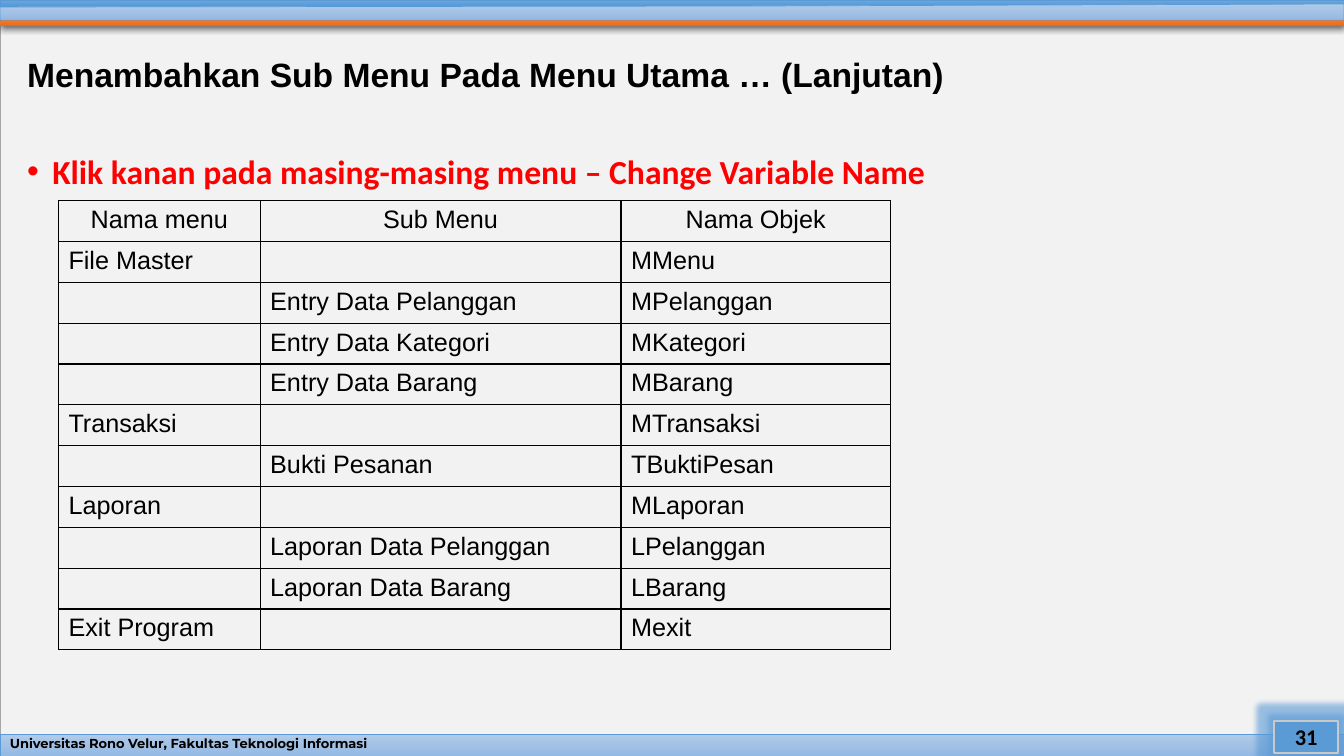
from lxml import etree
from pptx import Presentation
from pptx.dml.color import RGBColor
from pptx.enum.shapes import MSO_SHAPE
from pptx.enum.text import MSO_ANCHOR, PP_ALIGN
from pptx.oxml import parse_xml
from pptx.oxml.ns import nsdecls, qn
from pptx.util import Inches, Pt

RECT = MSO_SHAPE.RECTANGLE
TOP, MIDDLE = MSO_ANCHOR.TOP, MSO_ANCHOR.MIDDLE
LEFT, CENTER = PP_ALIGN.LEFT, PP_ALIGN.CENTER

BLACK = RGBColor(0x00, 0x00, 0x00)
RED = RGBColor(0xFF, 0x00, 0x00)
PAPER = RGBColor(0xF2, 0xF2, 0xF2)
GRAY = RGBColor(0xA5, 0xA5, 0xA5)
SILVER = RGBColor(0xC9, 0xC9, 0xC9)
BLUE = RGBColor(0x5B, 0x9B, 0xD5)
LIGHT_BLUES = (RGBColor(0xB1, 0xCB, 0xE9), RGBColor(0xA3, 0xC1, 0xE5), RGBColor(0x93, 0xB9, 0xE4))
DEEP_BLUES = (RGBColor(0x71, 0xA6, 0xDB), RGBColor(0x55, 0x9B, 0xDB), RGBColor(0x44, 0x8A, 0xCA))
ORANGES = (RGBColor(0xF1, 0x8C, 0x57), RGBColor(0xF6, 0x7B, 0x28), RGBColor(0xE5, 0x6C, 0x19))

WIDTH, HEIGHT = 13.33, 7.5
MENU_COLS = (2, 3.58, 2.67)
MENU_ROWS = (
    ("Nama menu", "Sub Menu", "Nama Objek"),
    ("File Master", "", "MMenu"),
    ("", "Entry Data Pelanggan", "MPelanggan"),
    ("", "Entry Data Kategori", "MKategori"),
    ("", "Entry Data Barang", "MBarang"),
    ("Transaksi", "", "MTransaksi"),
    ("", "Bukti Pesanan", "TBuktiPesan"),
    ("Laporan", "", "MLaporan"),
    ("", "Laporan Data Pelanggan", "LPelanggan"),
    ("", "Laporan Data Barang", "LBarang"),
    ("Exit Program", "", "Mexit"),
)


def write(tf, text, font="Arial", size=18, color=BLACK, bold=False, align=LEFT,
          spacing=None, before=None, bullet=None):
    """Write one formatted paragraph into a text frame."""
    p = tf.paragraphs[0]
    p.alignment = align
    p.line_spacing = spacing
    p.space_before = before
    if bullet:
        pPr = p._p.get_or_add_pPr()
        pPr.set("marL", str(Inches(0.25)))
        pPr.set("indent", str(-Inches(0.25)))
        etree.SubElement(pPr, qn("a:buFont")).set("typeface", "Arial")
        etree.SubElement(pPr, qn("a:buChar")).set("char", bullet)
    r = p.add_run()
    r.text = text
    r.font.name, r.font.size, r.font.bold = font, Pt(size), bold
    r.font.color.rgb = color


class Deck:
    """Holds the style and the current slide."""

    def __init__(self, prs):
        self.s = prs.slides.add_slide(prs.slide_layouts[6])

    def paint(self, sp, fill, line=None, weight=0.5):
        """Set a solid or vertical gradient fill and the outline."""
        sp.shadow.inherit = False
        if isinstance(fill, RGBColor):
            sp.fill.solid()
            sp.fill.fore_color.rgb = fill
        else:
            stops = "".join(f'<a:gs pos="{i * 50000}"><a:srgbClr val="{c}"/></a:gs>'
                            for i, c in enumerate(fill))
            sp.fill.background()
            old = sp._element.spPr.find(qn("a:noFill"))
            sp._element.spPr.replace(old, parse_xml(
                f'<a:gradFill {nsdecls("a")}><a:gsLst>{stops}</a:gsLst>'
                '<a:lin ang="5400000" scaled="0"/></a:gradFill>'))
        if line is None:
            sp.line.fill.background()
        else:
            sp.line.color.rgb = line
            sp.line.width = Pt(weight)
        return sp

    def rect(self, x, y, w, h, fill, line, weight=0.5):
        """Add a rectangle."""
        sp = self.s.shapes.add_shape(RECT, Inches(x), Inches(y), Inches(w), Inches(h))
        return self.paint(sp, fill, line, weight)

    def outline(self, points, fill, line=None):
        """Add a closed polygon."""
        start, *rest = [(Inches(x), Inches(y)) for x, y in points]
        fb = self.s.shapes.build_freeform(*start, scale=1.0)
        fb.add_line_segments(rest, close=True)
        return self.paint(fb.convert_to_shape(), fill, line)

    def effect(self, sp, xml):
        """Add a shadow or glow to a shape."""
        sp._element.spPr.find(qn("a:effectLst")).append(parse_xml(xml))

    def text(self, x, y, w, h, text, anchor=TOP, **style):
        """Add a text box."""
        sp = self.s.shapes.add_textbox(Inches(x), Inches(y), Inches(w), Inches(h))
        tf = sp.text_frame
        tf.word_wrap = True
        tf.vertical_anchor = anchor
        write(tf, text, **style)

    def table(self, x, y, cols, height, rows):
        """Add a plain table with equal rows and thin black borders."""
        table = self.s.shapes.add_table(
            len(rows), len(cols), Inches(x), Inches(y),
            Inches(sum(cols)), Inches(height)).table
        table.first_row = table.horz_banding = False
        for column, width in zip(table.columns, cols):
            column.width = Inches(width)
        for i, row in enumerate(rows):
            for j, value in enumerate(row):
                cell = table.cell(i, j)
                cell.fill.background()
                self.border(cell)
                if value:
                    write(cell.text_frame, value, align=LEFT if i else CENTER)

    def border(self, cell):
        """Draw all four borders of a cell."""
        tcPr = cell._tc.get_or_add_tcPr()
        for i, side in enumerate("LRTB"):
            tcPr.insert(i, parse_xml(
                f'<a:ln{side} {nsdecls("a")} w="{Pt(1)}"><a:solidFill>'
                f'<a:srgbClr val="{BLACK}"/></a:solidFill></a:ln{side}>'))


def main():
    """Build and save the slide."""
    prs = Presentation()
    prs.slide_width, prs.slide_height = Inches(WIDTH), Inches(HEIGHT)
    d = Deck(prs)

    d.rect(0, 0.04, WIDTH, 7.46, PAPER, GRAY)
    stripe = d.outline([(WIDTH, 0.26), (0, 0.26), (0.03, 0.13), (WIDTH, 0.13)], ORANGES)
    d.effect(stripe, f'<a:outerShdw {nsdecls("a")} blurRad="{Pt(4.5)}" dist="{Pt(1.5)}" '
             f'dir="5400000"><a:srgbClr val="{BLACK}"><a:alpha val="63000"/>'
             '</a:srgbClr></a:outerShdw>')
    d.rect(0, 7.29, WIDTH, 0.21, LIGHT_BLUES, BLUE)
    d.rect(0, 0, WIDTH, 0.11, DEEP_BLUES, BLUE)
    d.outline([(WIDTH, 0.2), (0, 0.2), (0, 0.07), (7.5, 0.06), (WIDTH, 0.04)], LIGHT_BLUES, BLUE)

    d.text(0, 7.29, WIDTH, 0.21, "Universitas Rono Velur, Fakultas Teknologi Informasi",
           anchor=MIDDLE, font="Montserrat", size=9.3, bold=True, spacing=0.7)
    number = d.rect(12.64, 7.15, 0.63, 0.32, BLUE, SILVER, 1.5)
    d.effect(number, f'<a:glow {nsdecls("a")} rad="{Pt(8)}"><a:srgbClr val="{BLUE}">'
             '<a:alpha val="60000"/></a:srgbClr></a:glow>')
    number.text_frame.vertical_anchor = MIDDLE
    write(number.text_frame, "31", font="Calibri", size=16, bold=True, align=CENTER)

    d.text(0.17, 0.53, 12.85, 0.68, "Menambahkan Sub Menu Pada Menu Utama … (Lanjutan)",
           size=24, bold=True, spacing=0.9)
    d.text(0.17, 1.49, 12.85, 5.58, "Klik kanan pada masing-masing menu – Change Variable Name",
           font="Calibri", size=24, color=RED, bold=True, spacing=0.9, before=Pt(10), bullet="•")
    d.table(0.58, 1.99, MENU_COLS, 4.46, MENU_ROWS)
    prs.save("out.pptx")


if __name__ == "__main__":
    main()
